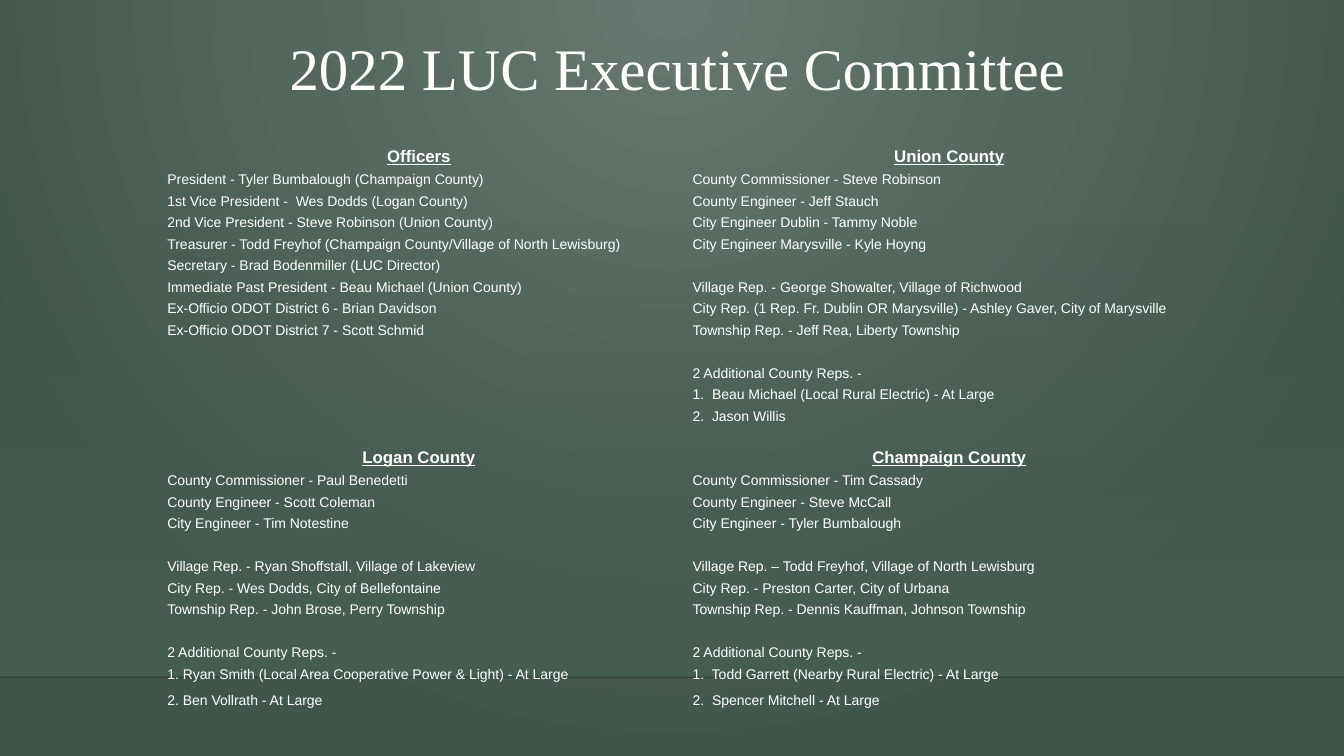
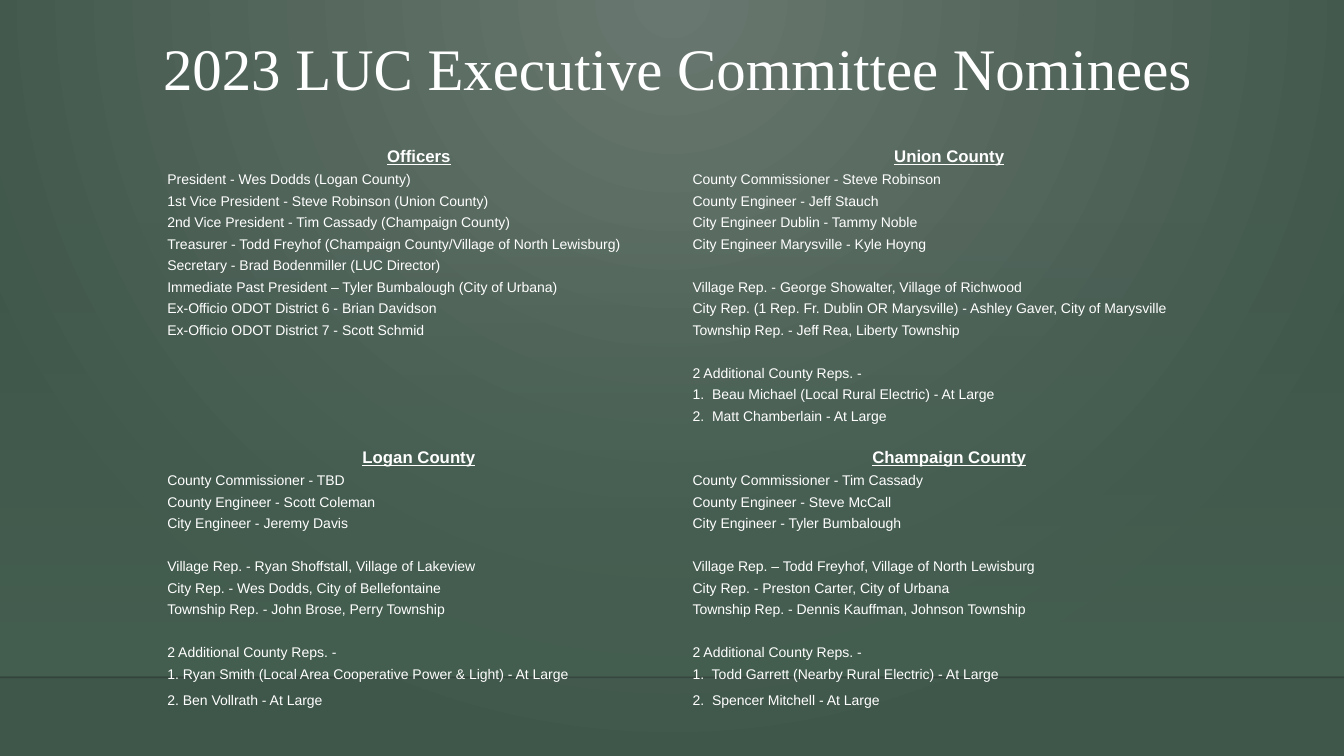
from itertools import zip_longest

from lxml.etree import SubElement
from pptx import Presentation
from pptx.dml.color import RGBColor
from pptx.enum.shapes import MSO_CONNECTOR, MSO_SHAPE
from pptx.enum.text import MSO_ANCHOR, MSO_AUTO_SIZE, PP_ALIGN
from pptx.oxml.ns import qn
from pptx.util import Inches, Pt

WIDE, HIGH = Inches(13.33), Inches(7.5)
WHITE = RGBColor(0xFF, 0xFF, 0xFF)
BLACK = RGBColor(0x00, 0x00, 0x01)
GLOW = RGBColor(0x68, 0x77, 0x6F)
EDGE = RGBColor(0x3F, 0x56, 0x4A)
GREEN = RGBColor(0x45, 0x5F, 0x51)

TITLE = {"name": "Times New Roman", "size": Pt(42), "bold": False}
HEAD = {"name": "Arial", "size": Pt(12), "bold": True, "underline": True}
BODY = {"name": "Arial", "size": Pt(10), "bold": False, "underline": False}
CELL = {"margin_left": Inches(0.01), "margin_right": Inches(0.01),
        "margin_top": Inches(0.01), "margin_bottom": 0,
        "vertical_anchor": MSO_ANCHOR.BOTTOM}
PLAIN = "{2D5ABB26-0587-4C30-8999-92F81FD0307C}"

LEFT, TOP, DEPTH = 1.65, 1.38, 5.66
COLS = (5.01, 0.2, 5.11)
FIRST, LAST = 0.27, 0.26
BLOCK = 14
EXTRA = "2 Additional County Reps. -"

YEARS = (
    {"title": "2022 LUC Executive Committee",
     "chief": "Tyler Bumbalough (Champaign County)",
     "vice": " Wes Dodds (Logan County)",
     "second": "Steve Robinson (Union County)",
     "past": "- Beau Michael (Union County)",
     "union": "Jason Willis",
     "logan": "Paul Benedetti",
     "city": "Tim Notestine"},
    {"title": "2023 LUC Executive Committee Nominees",
     "chief": "Wes Dodds (Logan County)",
     "vice": "Steve Robinson (Union County)",
     "second": "Tim Cassady (Champaign County)",
     "past": "– Tyler Bumbalough (City of Urbana)",
     "union": "Matt Chamberlain - At Large",
     "logan": "TBD",
     "city": "Jeremy Davis"},
)

OFFICE = (
    "Officers",
    "President - {chief}",
    "1st Vice President - {vice}",
    "2nd Vice President - {second}",
    "Treasurer - Todd Freyhof (Champaign County/Village of North Lewisburg)",
    "Secretary - Brad Bodenmiller (LUC Director)",
    "Immediate Past President {past}",
    "Ex-Officio ODOT District 6 - Brian Davidson",
    "Ex-Officio ODOT District 7 - Scott Schmid",
)
UNION = (
    "Union County",
    "County Commissioner - Steve Robinson",
    "County Engineer - Jeff Stauch",
    "City Engineer Dublin - Tammy Noble",
    "City Engineer Marysville - Kyle Hoyng",
    "",
    "Village Rep. - George Showalter, Village of Richwood",
    "City Rep. (1 Rep. Fr. Dublin OR Marysville) - Ashley Gaver, City of Marysville",
    "Township Rep. - Jeff Rea, Liberty Township",
    "",
    EXTRA,
    "1.  Beau Michael (Local Rural Electric) - At Large",
    "2.  {union}",
    "",
)
LOGAN = (
    "Logan County",
    "County Commissioner - {logan}",
    "County Engineer - Scott Coleman",
    "City Engineer - {city}",
    "",
    "Village Rep. - Ryan Shoffstall, Village of Lakeview",
    "City Rep. - Wes Dodds, City of Bellefontaine",
    "Township Rep. - John Brose, Perry Township",
    "",
    EXTRA,
    "1. Ryan Smith (Local Area Cooperative Power & Light) - At Large",
    "2. Ben Vollrath - At Large",
)
CHAMP = (
    "Champaign County",
    "County Commissioner - Tim Cassady",
    "County Engineer - Steve McCall",
    "City Engineer - Tyler Bumbalough",
    "",
    "Village Rep. – Todd Freyhof, Village of North Lewisburg",
    "City Rep. - Preston Carter, City of Urbana",
    "Township Rep. - Dennis Kauffman, Johnson Township",
    "",
    EXTRA,
    "1.  Todd Garrett (Nearby Rural Electric) - At Large",
    "2.  Spencer Mitchell - At Large",
)


def apply(item, form):
    """Set each attribute named in a format."""
    for key, value in form.items():
        setattr(item, key, value)


def add(node, tag, **attrs):
    """Append an XML child with the given attributes."""
    return SubElement(node, qn(tag), {k: str(v) for k, v in attrs.items()})


def fade(fill, root, stops):
    """Make a fill a gradient of (place, colour, alpha) stops and return it."""
    fill.gradient()
    grad = root.find(".//" + qn("a:gradFill"))
    for child in list(grad):
        grad.remove(child)
    group = add(grad, "a:gsLst")
    for place, tint, alpha in stops:
        stop = add(group, "a:gs", pos=place * 1000)
        add(add(stop, "a:srgbClr", val=tint), "a:alpha", val=alpha * 1000)
    return grad


def dress(layout, slide):
    """Give the layout its backdrop, lower band and floor line."""
    grad = fade(layout.background.fill, layout.element,
                ((0, GLOW, 100), (100, EDGE, 100)))
    add(add(grad, "a:path", path="circle"), "a:fillToRect",
        l=43000, t=0, r=43000, b=100000)

    band = slide.shapes.add_shape(MSO_SHAPE.RECTANGLE, 0, Inches(2.2),
                                  WIDE, Inches(4.5))
    band.shadow.inherit = False
    band.line.fill.background()
    grad = fade(band.fill, band.element, ((0, GREEN, 0), (100, GREEN, 100)))
    add(grad, "a:lin", ang=5400000, scaled=0)

    floor = Inches(6.72)
    line = slide.shapes.add_connector(MSO_CONNECTOR.STRAIGHT, 0, floor,
                                      WIDE, floor)
    line.line.width = Pt(1)
    line.line.color.rgb = BLACK
    add(line.element.find(".//" + qn("a:srgbClr")), "a:alpha", val=20000)
    add(line.element.spPr, "a:effectLst")

    tree = layout.placeholders[0].element.getparent()
    for spot, shape in enumerate((band, line), 2):
        tree.insert(spot, shape.element)


def head(slide, text):
    """Place and format the slide title."""
    title = slide.shapes.title
    apply(title, {"left": Inches(0.84), "top": Inches(0.49),
                  "width": Inches(11.76), "height": Inches(0.58)})
    frame = title.text_frame
    apply(frame, {"text": text, "word_wrap": True,
                  "auto_size": MSO_AUTO_SIZE.NONE,
                  "vertical_anchor": MSO_ANCHOR.BOTTOM})
    para = frame.paragraphs[0]
    apply(para, {"alignment": PP_ALIGN.CENTER, "line_spacing": 0.9})
    apply(para.runs[0].font, TITLE)
    para.runs[0].font.color.rgb = WHITE


def write(cell, text, top):
    """Fill one cell with a heading, an entry or nothing."""
    apply(cell, CELL)
    cell.fill.background()
    para = cell.text_frame.paragraphs[0]
    para.alignment = PP_ALIGN.CENTER if top else PP_ALIGN.LEFT
    if not text:
        add(para._p, "a:endParaRPr", sz=1000)
        return
    run = para.add_run()
    run.text = text
    apply(run.font, HEAD if top else BODY)
    run.font.color.rgb = WHITE


def roster(slide, year):
    """Draw the four member lists as one table."""
    lines = [*zip_longest(OFFICE, UNION, fillvalue=""), *zip(LOGAN, CHAMP)]
    count = len(lines)
    frame = slide.shapes.add_table(count, len(COLS), Inches(LEFT), Inches(TOP),
                                   Inches(sum(COLS)), Inches(DEPTH))
    table = frame.table
    apply(table, {"first_row": False, "horz_banding": False})
    table._tbl.tblPr.find(qn("a:tableStyleId")).text = PLAIN
    for col, width in zip(table.columns, COLS):
        col.width = Inches(width)
    pitch = (DEPTH - FIRST - LAST) / (count - 2)
    sizes = [FIRST, *[pitch] * (count - 2), LAST]
    for num, (left, right) in enumerate(lines):
        table.rows[num].height = Inches(sizes[num])
        for col, text in enumerate((left, "", right)):
            write(table.cell(num, col), text.format(**year), num % BLOCK == 0)


def main():
    """Build and save both slides."""
    deck = Presentation()
    apply(deck, {"slide_width": WIDE, "slide_height": HIGH})
    layout = deck.slide_layouts[5]
    for num, year in enumerate(YEARS):
        slide = deck.slides.add_slide(layout)
        if num == 0:
            dress(layout, slide)
        head(slide, year["title"])
        roster(slide, year)
    deck.save("out.pptx")


if __name__ == "__main__":
    main()
